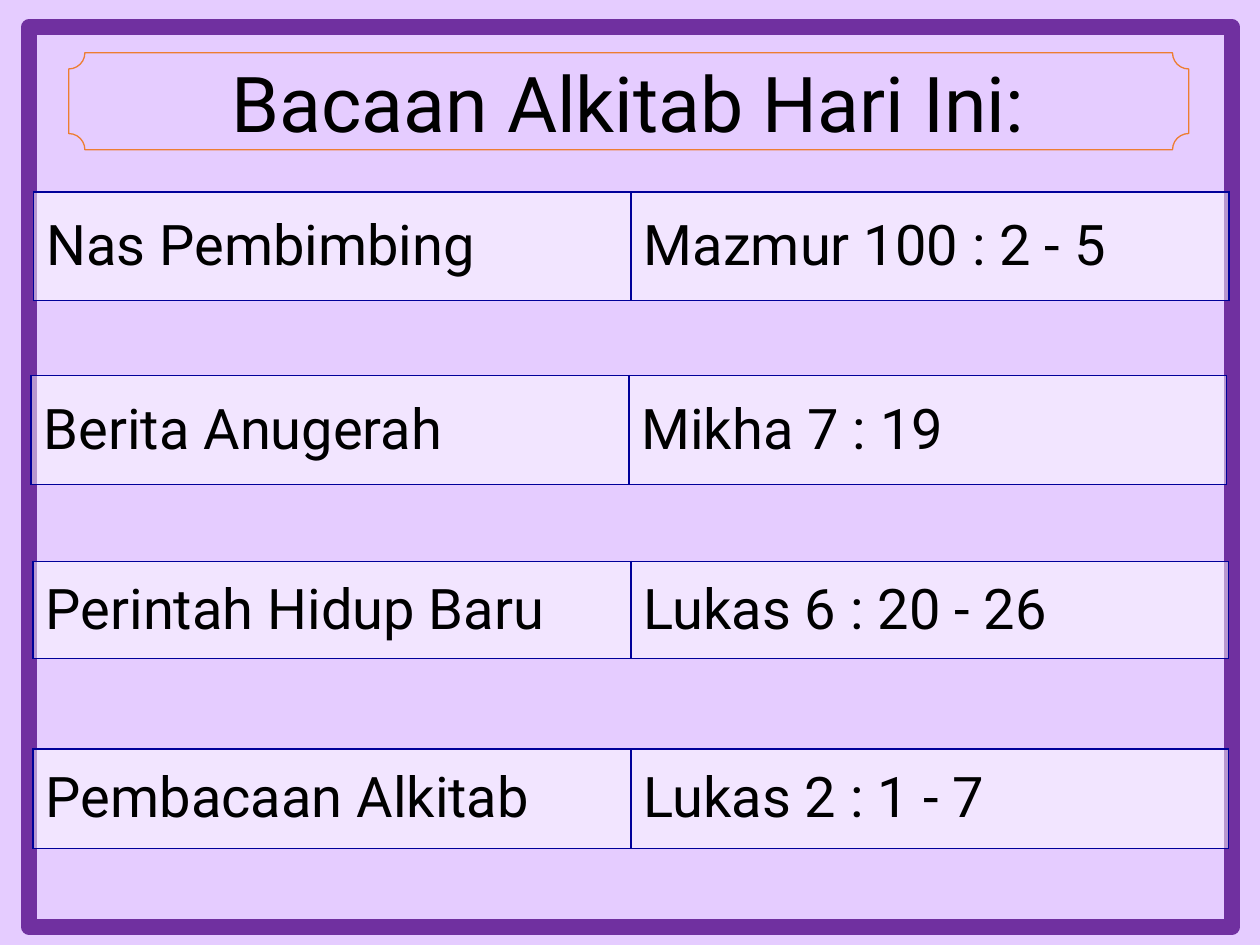
import pptx
import pptx.dml.color
import pptx.enum.shapes
import pptx.enum.text
import pptx.oxml
import pptx.oxml.ns
import pptx.util
from lxml import etree

Pt = pptx.util.Pt
RGB = pptx.dml.color.RGBColor.from_string
qn = pptx.oxml.ns.qn
MIDDLE = pptx.enum.text.MSO_ANCHOR.MIDDLE

theme = {
    "font": "Roboto", "title_size": 44, "text_size": 32,
    "text": "000000", "page": "E5CCFF", "frame": "7030A0",
    "plaque": "ED7D31", "cell": "FFFFFF", "border": "000099",
}

# Label, passage, left, top, row height
readings = [
    ("Nas Pembimbing", "Mazmur 100 : 2 - 5", 19.2, 109.6, 62.2),
    ("Berita Anugerah", "Mikha 7 : 19", 17.8, 214.6, 62.2),
    ("Perintah Hidup Baru", "Lukas 6 : 20 - 26", 19, 320.9, 55.3),
    ("Pembacaan Alkitab", "Lukas 2 : 1 - 7", 19, 427.9, 57),
]
column_width = 341.5


def add_outline(page, kind, place, color, width):
    shape = page.shapes.add_shape(kind, *map(Pt, place))
    shape.shadow.inherit = False
    shape.fill.background()
    shape.line.color.rgb = RGB(color)
    shape.line.width = Pt(width)
    return shape


def write(frame, text, size):
    para = frame.paragraphs[0]
    span = para.add_run()
    span.text = text
    formats = {"name": theme["font"], "size": Pt(size), "bold": False}
    for name, value in formats.items():
        setattr(span.font, name, value)
    span.font.color.rgb = RGB(theme["text"])
    return para


deck = pptx.Presentation()
deck.slide_width, deck.slide_height = Pt(720), Pt(540)
page = deck.slides.add_slide(deck.slide_layouts[5])
page.background.fill.solid()
page.background.fill.fore_color.rgb = RGB(theme["page"])

# Page frame and title plaque
kinds = pptx.enum.shapes.MSO_SHAPE
title_place = (39.3, 30.2, 640, 55.4)
add_outline(page, kinds.RECTANGLE, (16.6, 15.6, 687.4, 514), theme["frame"], 9)
plaque = add_outline(page, kinds.PLAQUE, title_place, theme["plaque"], 0.75)
plaque.adjustments[0] = 0.167

# Title, in front of its plaque
title = page.shapes.title
for name, value in zip(("left", "top", "width", "height"), title_place):
    setattr(title, name, Pt(value))
title.text_frame.vertical_anchor = MIDDLE
title.text_frame.auto_size = pptx.enum.text.MSO_AUTO_SIZE.NONE
para = write(title.text_frame, "Bacaan Alkitab Hari Ini:", theme["title_size"])
para.alignment = pptx.enum.text.PP_ALIGN.CENTER
page.shapes._spTree.append(title._element)

# One table for each reading
for label, passage, left, top, height in readings:
    holder = page.shapes.add_table(
        1, 2, Pt(left), Pt(top), Pt(2 * column_width), Pt(height))
    table = holder.table
    table.first_row = table.horz_banding = False
    for column, text in enumerate((label, passage)):
        table.columns[column].width = Pt(column_width)
        cell = table.cell(0, column)
        cell.vertical_anchor = MIDDLE
        para = write(cell.text_frame, text, theme["text_size"])
        spacing = etree.SubElement(para._p.get_or_add_pPr(), qn("a:spcBef"))
        etree.SubElement(spacing, qn("a:spcPct"), val="20000")

        # Borders, then the half-transparent fill
        properties = cell._tc.get_or_add_tcPr()
        for side in ("a:lnL", "a:lnR", "a:lnT", "a:lnB"):
            line = etree.SubElement(properties, qn(side), w=str(Pt(1)))
            paint = etree.SubElement(line, qn("a:solidFill"))
            etree.SubElement(paint, qn("a:srgbClr"), val=theme["border"])
        cell.fill.solid()
        cell.fill.fore_color.rgb = RGB(theme["cell"])
        color = properties.find(qn("a:solidFill")).find(qn("a:srgbClr"))
        etree.SubElement(color, qn("a:alpha"), val="50000")

deck.save("out.pptx")
